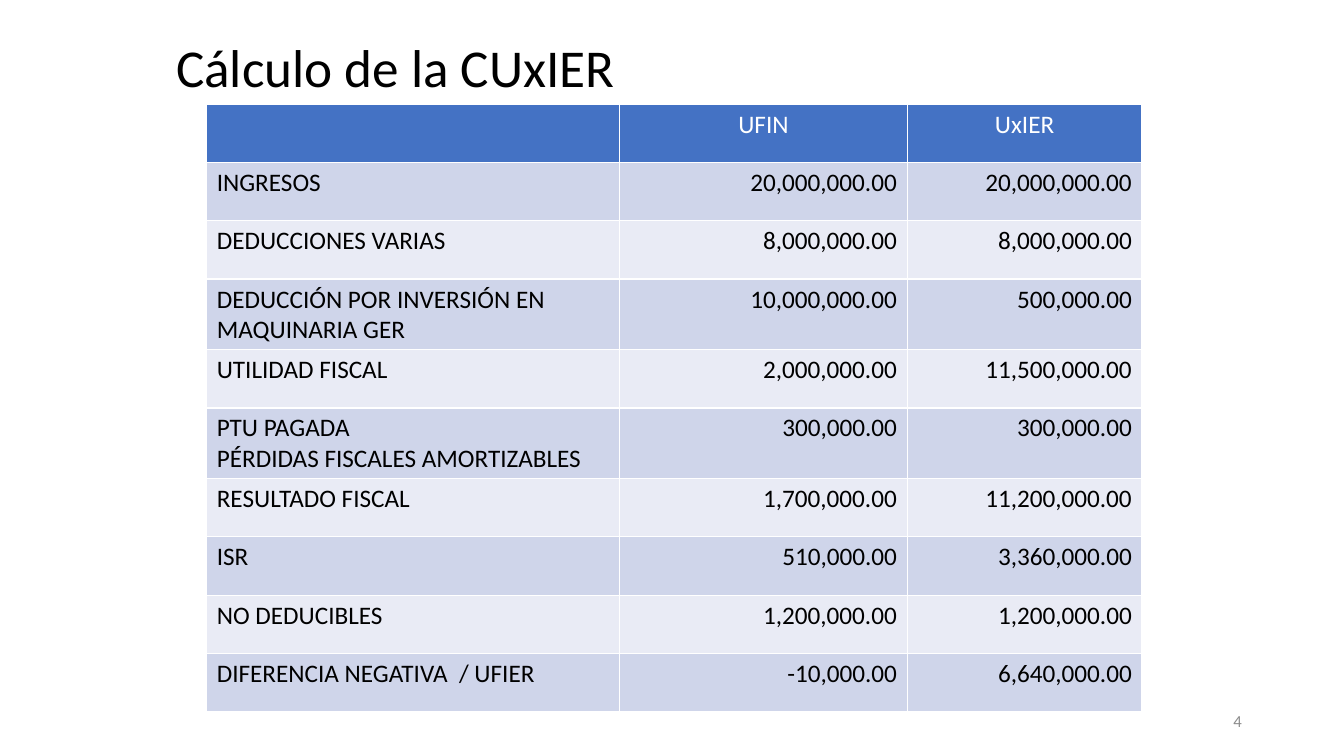
from pptx import Presentation
from pptx.dml.color import RGBColor
from pptx.enum.text import MSO_ANCHOR, PP_ALIGN
from pptx.util import Cm, Pt

FONT = "Calibri"
BLACK = RGBColor(0x00, 0x00, 0x00)
WHITE = RGBColor(0xFF, 0xFF, 0xFF)
GREY = RGBColor(0x8C, 0x8C, 0x8C)
HEADER_BLUE = RGBColor(0x44, 0x72, 0xC4)
BANDS = (RGBColor(0xCF, 0xD5, 0xEA), RGBColor(0xE9, 0xEB, 0xF5))

COLUMN_WIDTHS = (10.41, 7.24, 5.92)
ROW_HEIGHT = 1.47
ROWS = (
    ("", "UFIN", "UxIER"),
    ("INGRESOS", "20,000,000.00", "20,000,000.00"),
    ("DEDUCCIONES VARIAS", "8,000,000.00", "8,000,000.00"),
    ("DEDUCCIÓN POR INVERSIÓN EN MAQUINARIA GER", "10,000,000.00", "500,000.00"),
    ("UTILIDAD FISCAL", "2,000,000.00", "11,500,000.00"),
    ("PTU PAGADA\nPÉRDIDAS FISCALES AMORTIZABLES", "300,000.00", "300,000.00"),
    ("RESULTADO FISCAL", "1,700,000.00", "11,200,000.00"),
    ("ISR", "510,000.00", "3,360,000.00"),
    ("NO DEDUCIBLES", "1,200,000.00", "1,200,000.00"),
    ("DIFERENCIA NEGATIVA  / UFIER", "-10,000.00", "6,640,000.00"),
)


def write_text(tf, text, size, color, align):
    tf.text = text
    for p in tf.paragraphs:
        p.alignment = align
        p.font.name = FONT
        p.font.size = Pt(size)
        p.font.bold = False
        p.font.color.rgb = color


def add_text(slide, box, text, size, color, align=PP_ALIGN.LEFT):
    tf = slide.shapes.add_textbox(*map(Cm, box)).text_frame
    tf.word_wrap = True
    tf.vertical_anchor = MSO_ANCHOR.MIDDLE
    write_text(tf, text, size, color, align)
    return tf


def fill_cell(cell, text, row, column):
    """Style a cell by its place: blue header, banded body, figures to the right."""
    if row == 0:
        fill, color, align = HEADER_BLUE, WHITE, PP_ALIGN.CENTER
    else:
        fill, color = BANDS[(row - 1) % 2], BLACK
        align = PP_ALIGN.RIGHT if column else PP_ALIGN.LEFT
    cell.fill.solid()
    cell.fill.fore_color.rgb = fill
    write_text(cell.text_frame, text, 18, color, align)


def add_calculation_table(slide, left, top):
    width, height = sum(COLUMN_WIDTHS), ROW_HEIGHT * len(ROWS)
    table = slide.shapes.add_table(
        len(ROWS), len(COLUMN_WIDTHS), Cm(left), Cm(top), Cm(width), Cm(height)
    ).table
    for column, column_width in zip(table.columns, COLUMN_WIDTHS):
        column.width = Cm(column_width)
    for i, texts in enumerate(ROWS):
        table.rows[i].height = Cm(ROW_HEIGHT)
        for j, text in enumerate(texts):
            fill_cell(table.cell(i, j), text, i, j)


def main():
    prs = Presentation()
    prs.slide_width, prs.slide_height = Cm(33.87), Cm(19.05)
    slide = prs.slides.add_slide(prs.slide_layouts[6])

    title = add_text(slide, (4.19, 0.3, 25.4, 2.92), "Cálculo de la CUxIER", 38, BLACK)
    title.paragraphs[0].line_spacing = 0.9
    add_calculation_table(slide, 5.21, 2.62)
    add_text(slide, (23.93, 17.65, 7.62, 1.02), "4", 12, GREY, PP_ALIGN.RIGHT)

    prs.save("out.pptx")


if __name__ == "__main__":
    main()
